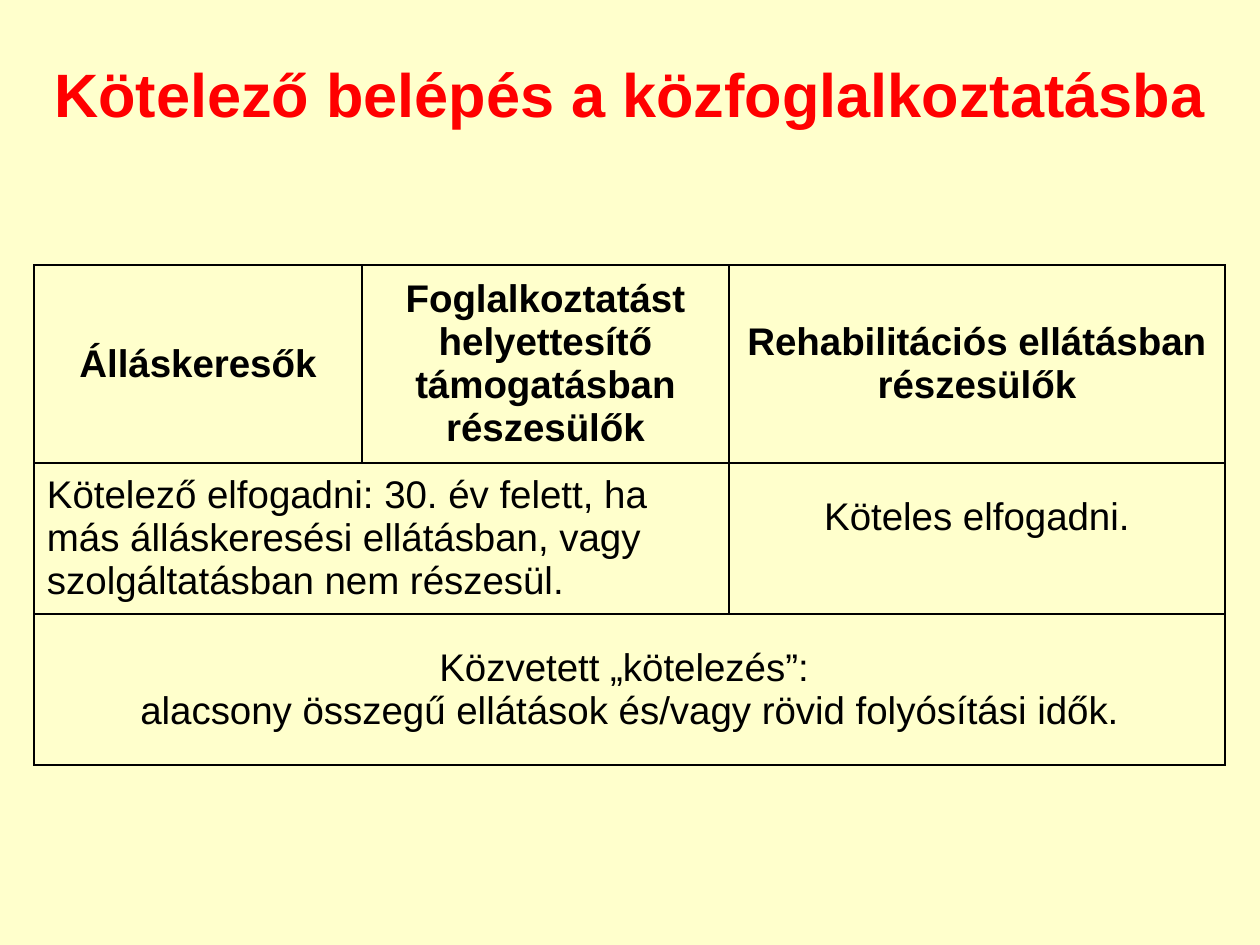
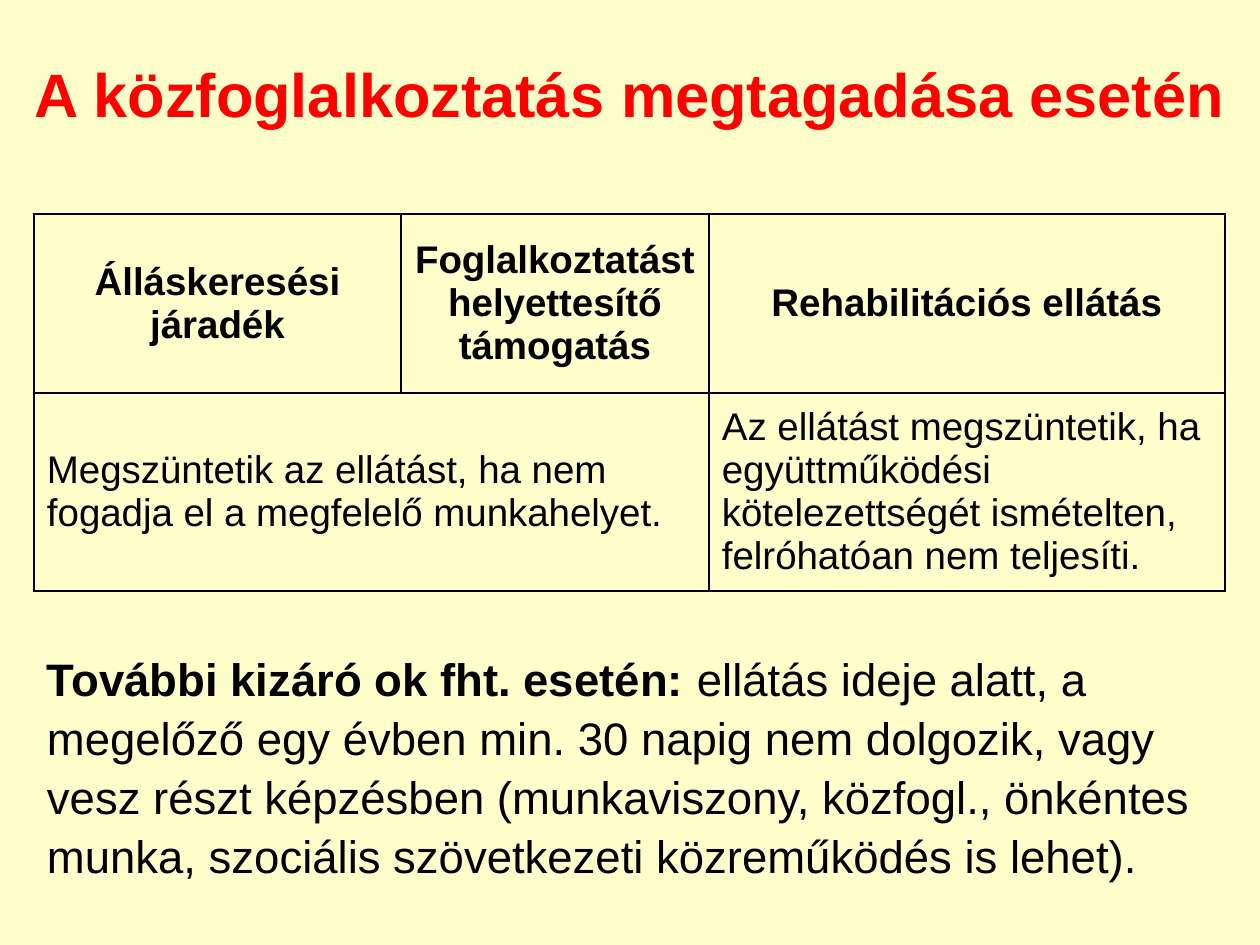
from lxml.etree import SubElement
from pptx import Presentation
from pptx.dml.color import RGBColor
from pptx.enum.text import MSO_ANCHOR, PP_ALIGN
from pptx.oxml.ns import qn
from pptx.util import Pt

PX_PER_INCH = 126
SLIDE_WIDTH, SLIDE_HEIGHT = 1260, 945
FONT = "Arial"
CREAM, RED, BLACK = "FFFFCC", "FF0000", "000000"
TITLE_BOX = (0, 44, SLIDE_WIDTH, 87)
TITLE_SIZE, TABLE_SIZE, NOTE_SIZE = 35, 22, 26
MARGIN_X, MARGIN_Y = 13, 6
TABLE_LINE = 43
LOOSE_SPACING = 1.08
LEFT, CENTER = PP_ALIGN.LEFT, PP_ALIGN.CENTER


def px(length):
    """Turn pixels into EMU."""
    return round(length * 914400 / PX_PER_INCH)


def color(code):
    """Turn a hex string into a colour."""
    return RGBColor.from_string(code)


def add_run(paragraph, text, size, bold=False, code=BLACK):
    """Append one formatted run to a paragraph."""
    run = paragraph.add_run()
    run.text = text
    run.font.name = FONT
    run.font.size = Pt(size)
    run.font.bold = bold
    run.font.color.rgb = color(code)


def set_margins(holder, bottom=MARGIN_Y):
    """Set the inner margins of a cell or a text frame."""
    holder.margin_left = holder.margin_right = px(MARGIN_X)
    holder.margin_top, holder.margin_bottom = px(MARGIN_Y), px(bottom)


def add_slide(presentation, title):
    """Add a cream slide with its red title."""
    slide = presentation.slides.add_slide(presentation.slide_layouts[6])
    slide.background.fill.solid()
    slide.background.fill.fore_color.rgb = color(CREAM)
    add_text(slide, TITLE_BOX, [(title, True)], TITLE_SIZE, CENTER, RED)
    return slide


def add_text(slide, box, runs, size, alignment=LEFT, code=BLACK):
    """Add a wrapped paragraph of (text, bold) runs in a box."""
    frame = slide.shapes.add_textbox(*map(px, box)).text_frame
    frame.word_wrap = True
    set_margins(frame)
    paragraph = frame.paragraphs[0]
    paragraph.alignment = alignment
    paragraph.line_spacing = LOOSE_SPACING
    for text, bold in runs:
        add_run(paragraph, text, size, bold, code)


def style_cell(cell):
    """Give a cell thin black borders, no fill and centred height."""
    properties = cell._tc.get_or_add_tcPr()
    for side in ("a:lnL", "a:lnR", "a:lnT", "a:lnB"):
        line = SubElement(properties, qn(side), w=str(Pt(1)))
        fill = SubElement(line, qn("a:solidFill"))
        SubElement(fill, qn("a:srgbClr"), val=BLACK)
    cell.fill.background()
    cell.vertical_anchor = MSO_ANCHOR.MIDDLE
    set_margins(cell)


def fill_cell(cell, lines, alignment=LEFT, bold=False):
    """Write each line as a paragraph of the cell."""
    frame = cell.text_frame
    for index, text in enumerate(lines):
        paragraph = frame.add_paragraph() if index else frame.paragraphs[0]
        paragraph.alignment = alignment
        add_run(paragraph, text, TABLE_SIZE, bold)


def add_benefit_table(slide, left, top, widths, heights, headings):
    """Add a bordered table with bold headings and a merged second row."""
    box = (left, top, sum(widths), sum(heights))
    frame = slide.shapes.add_table(len(heights), len(widths), *map(px, box))
    table = frame.table
    table.first_row = table.horz_banding = False
    for column, width in zip(table.columns, widths):
        column.width = px(width)
    for row, height in zip(table.rows, heights):
        row.height = px(height)
    for cell in table.iter_cells():
        style_cell(cell)
    for index, heading in enumerate(headings):
        fill_cell(table.cell(0, index), [heading], CENTER, True)
    table.cell(1, 0).merge(table.cell(1, 1))
    return table


def build_entry_slide(presentation):
    """Build the slide on compulsory entry."""
    slide = add_slide(presentation, "Kötelező belépés a közfoglalkoztatásba")
    table = add_benefit_table(
        slide, 34, 265, (328, 367, 496), (198, 151, 151),
        ("Álláskeresők",
         "Foglalkoztatást helyettesítő támogatásban részesülők",
         "Rehabilitációs ellátásban részesülők"))
    fill_cell(table.cell(1, 0), [
        "Kötelező elfogadni: 30. év felett, ha más álláskeresési ellátásban, "
        "vagy szolgáltatásban nem részesül."])
    duty = table.cell(1, 2)
    fill_cell(duty, ["Köteles elfogadni."], CENTER)
    set_margins(duty, MARGIN_Y + TABLE_LINE)
    table.cell(2, 0).merge(table.cell(2, 2))
    fill_cell(table.cell(2, 0), [
        "Közvetett „kötelezés”: ",
        "alacsony összegű ellátások és/vagy rövid folyósítási idők."], CENTER)


def build_refusal_slide(presentation):
    """Build the slide on refusing public work."""
    slide = add_slide(presentation, "A közfoglalkoztatás megtagadása esetén")
    table = add_benefit_table(
        slide, 34, 214, (367, 308, 516), (179, 198),
        ("Álláskeresési járadék",
         "Foglalkoztatást helyettesítő támogatás",
         "Rehabilitációs ellátás"))
    fill_cell(table.cell(1, 0), [
        "Megszüntetik az ellátást, ha nem fogadja el a megfelelő munkahelyet."])
    fill_cell(table.cell(1, 2), [
        "Az ellátást megszüntetik, ha együttműködési kötelezettségét "
        "ismételten, felróhatóan nem teljesíti."])
    add_text(slide, (34, 641, 1181, 233), [
        ("További kizáró ok fht. esetén: ", True),
        ("ellátás ideje alatt, a megelőző egy évben min. 30 napig nem "
         "dolgozik, vagy vesz részt képzésben (munkaviszony, közfogl., "
         "önkéntes munka, szociális szövetkezeti közreműködés is lehet).",
         False)], NOTE_SIZE)


def main():
    """Build and save the presentation."""
    presentation = Presentation()
    presentation.slide_width = px(SLIDE_WIDTH)
    presentation.slide_height = px(SLIDE_HEIGHT)
    build_entry_slide(presentation)
    build_refusal_slide(presentation)
    presentation.save("out.pptx")


if __name__ == "__main__":
    main()
